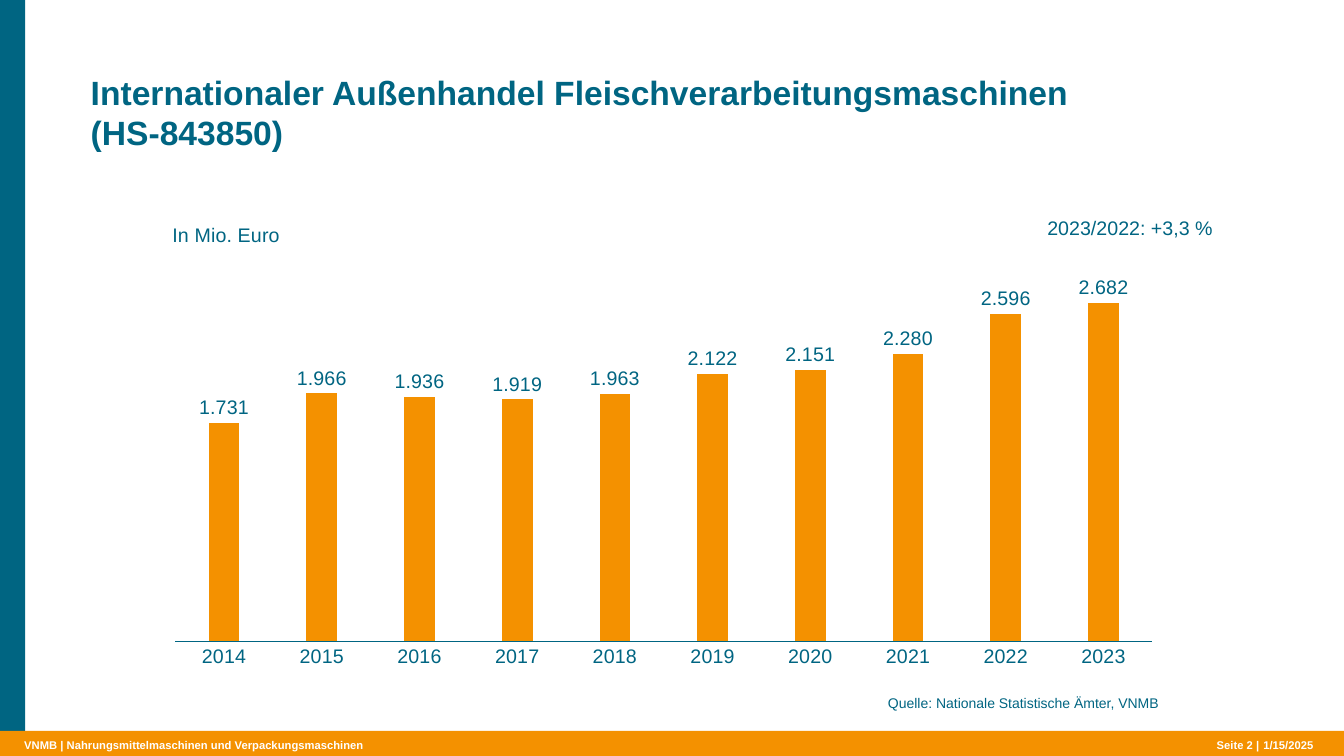
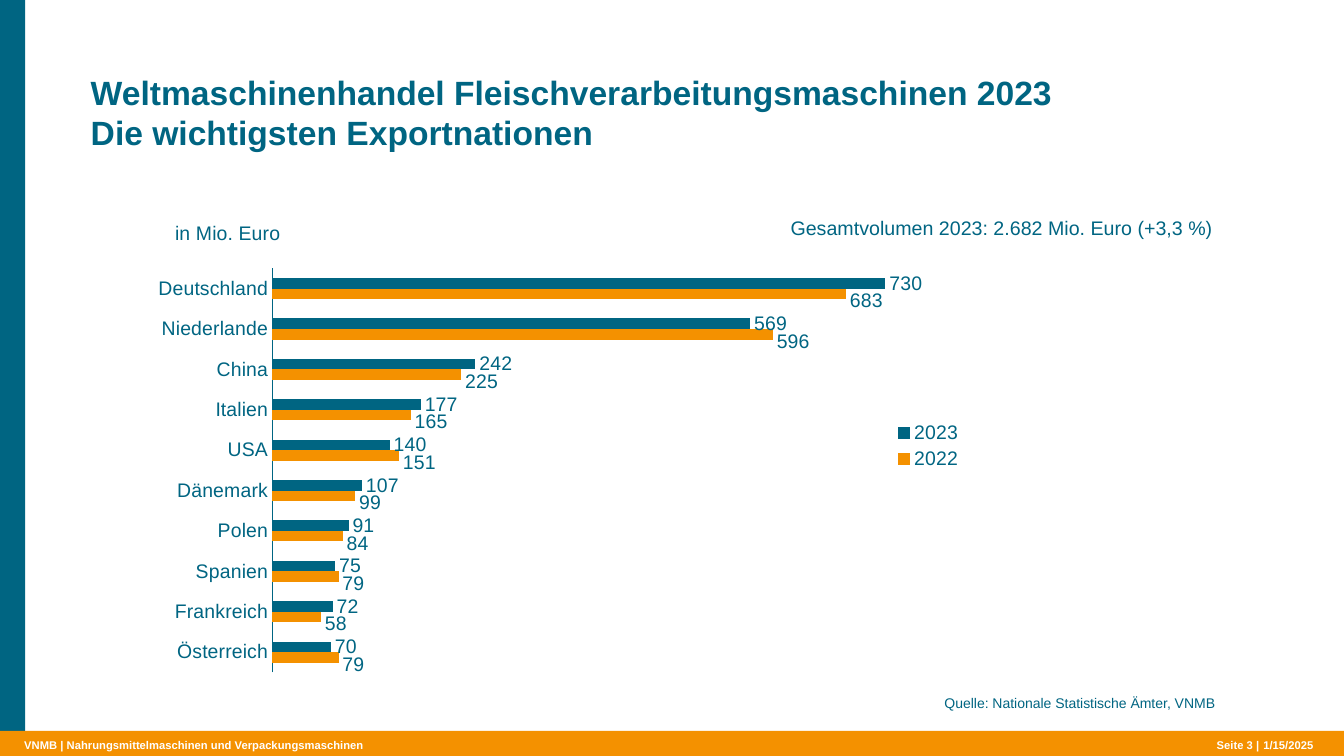
from dataclasses import dataclass

import pptx
import pptx.chart.data
import pptx.dml.color
import pptx.enum.chart
import pptx.enum.shapes
import pptx.enum.text
import pptx.oxml
import pptx.oxml.ns
import pptx.util
from pptx.util import Inches

COLORS = {"teal": "006582", "orange": "F49100", "white": "FFFFFF"}
FONT = "Arial"
LEFT = pptx.enum.text.PP_ALIGN.LEFT
RIGHT = pptx.enum.text.PP_ALIGN.RIGHT
CHART_TYPE = pptx.enum.chart.XL_CHART_TYPE


@dataclass
class Series:
    """One named row of chart values and its colour."""
    name: str
    values: list[int]
    color: str


@dataclass
class ChartSlide:
    """Content and chart settings of one slide."""
    title: str
    unit: str
    unit_at: tuple[float, float]
    note: str
    source_right: float
    kind: int
    categories: list[str]
    series: list[Series]
    plot: tuple[float, float, float, float]
    maximum: int
    gap: int
    overlap: int
    number_format: str


SLIDES = [
    ChartSlide(
        "Internationaler Außenhandel Fleischverarbeitungsmaschinen\v(HS-843850)",
        "In Mio. Euro", (0.01, 0.015), "2023/2022: +3,3 %", 11.49,
        CHART_TYPE.COLUMN_CLUSTERED,
        [str(year) for year in range(2014, 2024)],
        [Series("Series 1", [1731, 1966, 1936, 1919, 1963,
                             2122, 2151, 2280, 2596, 2682], "orange")],
        (0.016, 0.109, 0.923, 0.808), 3000, 219, -27, '0"."000'),
    ChartSlide(
        "Weltmaschinenhandel Fleischverarbeitungsmaschinen 2023\v"
        "Die wichtigsten Exportnationen",
        "in Mio. Euro", (0.003, 0.01),
        "Gesamtvolumen 2023: 2.682 Mio. Euro (+3,3 %)", 12.05,
        CHART_TYPE.BAR_CLUSTERED,
        ["Österreich", "Frankreich", "Spanien", "Polen", "Dänemark",
         "USA", "Italien", "China", "Niederlande", "Deutschland"],
        [Series("2022", [79, 58, 79, 84, 99, 151, 165, 225, 596, 683], "orange"),
         Series("2023", [70, 72, 75, 91, 107, 140, 177, 242, 569, 730], "teal")],
        (0.099, 0.121, 0.641, 0.862), 800, 182, 0, "0"),
]


def rgb(name: str) -> pptx.dml.color.RGBColor:
    """Return a palette colour."""
    return pptx.dml.color.RGBColor.from_string(COLORS[name])


def style_font(font, size: float, color: str = "teal", bold: bool = False) -> None:
    """Apply the shared typeface with a size, colour and weight."""
    font.name = FONT
    font.size = pptx.util.Pt(size)
    font.bold = bold
    font.color.rgb = rgb(color)


def add_text(s, text: str, x: float, y: float, w: float, h: float, size: float,
             color: str = "teal", bold: bool = False, align=LEFT,
             wrap: bool = True) -> None:
    """Add a text box without margins."""
    tf = s.shapes.add_textbox(Inches(x), Inches(y), Inches(w), Inches(h)).text_frame
    tf.margin_left = tf.margin_top = tf.margin_right = tf.margin_bottom = 0
    tf.word_wrap = wrap
    p = tf.paragraphs[0]
    p.text = text
    p.alignment = align
    style_font(p.font, size, color, bold)


def add_band(s, x: float, y: float, w: float, h: float, color: str) -> None:
    """Add a plain filled rectangle."""
    sp = s.shapes.add_shape(pptx.enum.shapes.MSO_SHAPE.RECTANGLE,
                            Inches(x), Inches(y), Inches(w), Inches(h))
    sp.shadow.inherit = False
    sp.fill.solid()
    sp.fill.fore_color.rgb = rgb(color)
    sp.line.fill.background()


def add_frame(s, number: int) -> None:
    """Add the side bar, the footer band and the footer texts."""
    add_band(s, 0, 0, 0.25, 7.5, "teal")
    add_band(s, 0, 7.25, 13.33, 0.25, "orange")
    for text, x, w, align in (
            ("VNMB", 0.24, 0.36, LEFT),
            ("| Nahrungsmittelmaschinen und Verpackungsmaschinen", 0.6, 3.85, LEFT),
            (f"Seite {number} |", 11.9, 0.59, RIGHT),
            ("1/15/2025", 12.53, 0.57, LEFT)):
        add_text(s, text, x, 7.32, w, 0.13, 8, "white", True, align, wrap=False)


def set_layout(parent, index: int, values: dict[str, float],
               edge: bool = True, inner: bool = False) -> None:
    """Give a chart part a manual position in fractions of the chart."""
    for old in parent.findall(pptx.oxml.ns.qn("c:layout")):
        parent.remove(old)
    target = '<c:layoutTarget val="inner"/>' if inner else ""
    modes = '<c:xMode val="edge"/><c:yMode val="edge"/>' if edge else ""
    parts = "".join(f'<c:{key} val="{value}"/>' for key, value in values.items())
    parent.insert(index, pptx.oxml.parse_xml(
        f'<c:layout {pptx.oxml.ns.nsdecls("c")}><c:manualLayout>'
        f'{target}{modes}{parts}</c:manualLayout></c:layout>'))


def style_axes(chart, maximum: int) -> None:
    """Show only the category line and scale the hidden value axis."""
    axis = chart.category_axis
    axis.major_tick_mark = pptx.enum.chart.XL_TICK_MARK.NONE
    axis.format.line.color.rgb = rgb("teal")
    axis.format.line.width = pptx.util.Pt(0.75)
    style_font(axis.tick_labels.font, 14)
    axis = chart.value_axis
    axis.visible = False
    axis.has_major_gridlines = False
    axis.minimum_scale = 0
    axis.maximum_scale = maximum


def add_legend(chart) -> None:
    """Add a legend beside the short bars."""
    chart.has_legend = True
    legend = chart.legend
    legend.position = pptx.enum.chart.XL_LEGEND_POSITION.RIGHT
    legend.include_in_layout = False
    style_font(legend.font, 14)
    set_layout(legend._element, 1, {"x": 0.69, "y": 0.44})


def lower_labels(chart, series, position) -> None:
    """Move the labels of one series down, clear of the bars above."""
    for i in range(len(series.values)):
        label = series.points[i].data_label
        style_font(label.font, 14)
        label.position = position
    for element in chart.element.xpath(".//c:dLbl"):
        set_layout(element, 1, {"x": 0, "y": 0.015}, edge=False)


def add_chart(s, content: ChartSlide) -> None:
    """Add the labelled bar or column chart."""
    data = pptx.chart.data.CategoryChartData(number_format="0")
    data.categories = content.categories
    for row in content.series:
        data.add_series(row.name, row.values)
    chart = s.shapes.add_chart(content.kind, Inches(1.57), Inches(2.1),
                               Inches(10.5), Inches(4.65), data).chart
    style_font(chart.font, 14)
    chart.has_title = True
    p = chart.chart_title.text_frame.paragraphs[0]
    p.text = content.unit
    style_font(p.font, 14)
    set_layout(chart.chart_title._element, 1, dict(zip("xy", content.unit_at)))
    set_layout(chart.element.xpath(".//c:plotArea")[0], 0,
               dict(zip("xywh", content.plot)), inner=True)
    style_axes(chart, content.maximum)

    plot = chart.plots[0]
    plot.vary_by_categories = False
    plot.gap_width = content.gap
    plot.overlap = content.overlap
    position = pptx.enum.chart.XL_LABEL_POSITION.OUTSIDE_END
    for series, row in zip(plot.series, content.series):
        series.format.fill.solid()
        series.format.fill.fore_color.rgb = rgb(row.color)
        labels = series.data_labels
        labels.show_value = True
        labels.number_format = content.number_format
        labels.number_format_is_linked = False
        labels.position = position
        style_font(labels.font, 14)
    chart.has_legend = False
    if len(content.series) > 1:
        add_legend(chart)
        lower_labels(chart, plot.series[0], position)


def main() -> None:
    """Build and save the presentation."""
    prs = pptx.Presentation()
    prs.slide_width, prs.slide_height = Inches(13.33), Inches(7.5)
    for number, content in enumerate(SLIDES, start=2):
        s = prs.slides.add_slide(prs.slide_layouts[6])
        add_frame(s, number)
        add_text(s, content.title, 0.9, 0.71, 10.09, 0.81, 24, bold=True)
        add_chart(s, content)
        add_text(s, content.note, 7.03, 2.14, 5, 0.25, 14, align=RIGHT)
        add_text(s, "Quelle: Nationale Statistische Ämter, VNMB",
                 content.source_right - 5, 6.89, 5, 0.27, 10, align=RIGHT)
    prs.save("out.pptx")


if __name__ == "__main__":
    main()
